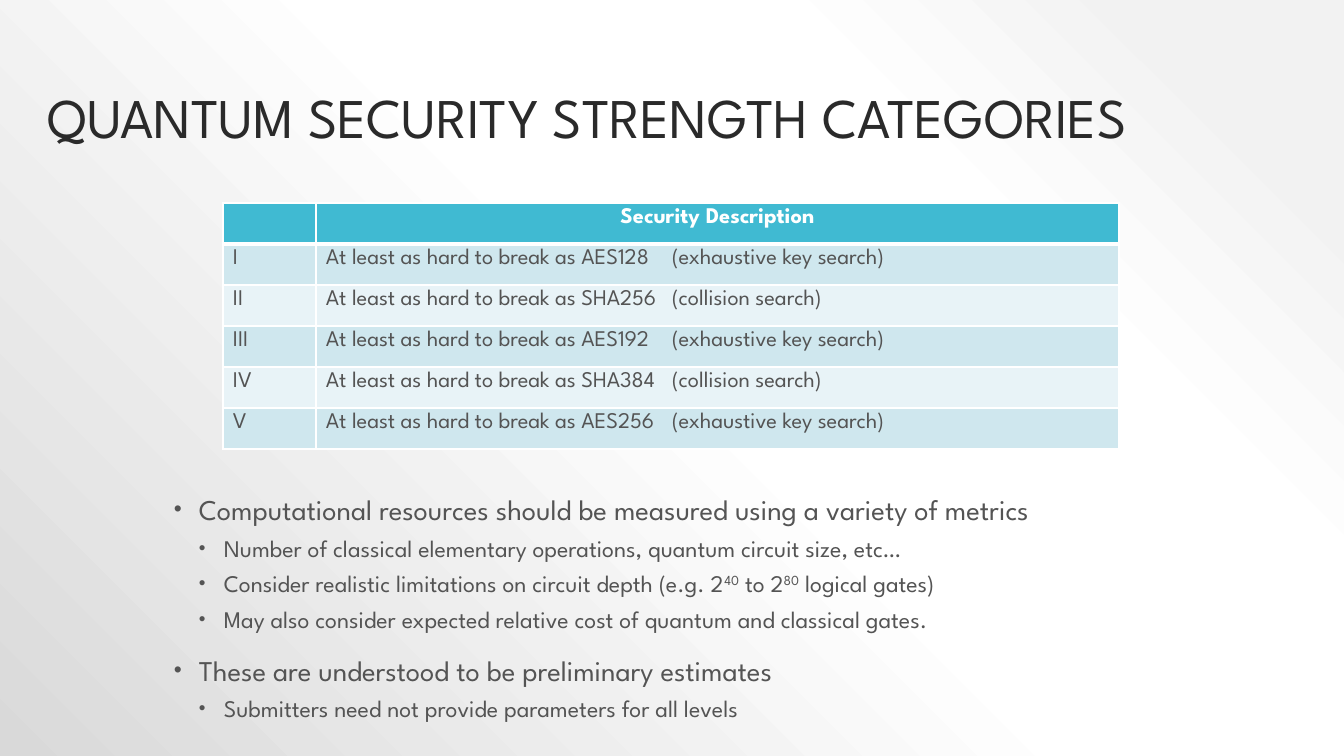
from lxml.etree import SubElement
from pptx import Presentation
from pptx.dml.color import RGBColor
from pptx.enum.text import MSO_ANCHOR, PP_ALIGN
from pptx.oxml.ns import qn
from pptx.util import Pt

PX = 914400 / 100.8
FONT = "League Spartan"
COLORS = {
    "title": "2A2A2A", "text": "545454", "white": "FFFFFF",
    "header": "40BAD2", "odd": "CFE7EE", "even": "E8F3F7",
    "corner": "F2F2F2", "far": "D9D9D9",
}


def px(length):
    return round(length * PX)


def style(para, size, color, bold=False):
    for span in para.runs:
        span.font.name = FONT
        span.font.size = Pt(size)
        span.font.bold = bold
        span.font.color.rgb = RGBColor.from_string(COLORS[color])


deck = Presentation()
deck.slide_width, deck.slide_height = px(1344), px(756)
page = deck.slides.add_slide(deck.slide_layouts[6])

# Background: radial gradient centred on the top right corner
page.background.fill.solid()
background = page.element.find(".//" + qn("p:bgPr"))
background.remove(background[0])
gradient = background.makeelement(qn("a:gradFill"), {"rotWithShape": "1"})
background.insert(0, gradient)
stops = SubElement(gradient, qn("a:gsLst"))
for percent, color in [(10, "corner"), (28, "white"), (48, "white"), (100, "far")]:
    stop = SubElement(stops, qn("a:gs"), pos=str(percent * 1000))
    SubElement(stop, qn("a:srgbClr"), val=COLORS[color])
circle = SubElement(gradient, qn("a:path"), {"path": "circle"})
SubElement(circle, qn("a:fillToRect"), l="100000", b="100000")

# Title
title = page.shapes.add_textbox(px(38), px(73), px(1243), px(83)).text_frame
title.word_wrap = True
title.vertical_anchor = MSO_ANCHOR.BOTTOM
title.text = "QUANTUM SECURITY STRENGTH CATEGORIES"
title.paragraphs[0].line_spacing = 0.9
style(title.paragraphs[0], 40, "title")

# Table of categories; a tab sets off the kind of search
HARD = "At least as hard to break as "
ROWS = [
    ("", "Security Description"),
    ("I", HARD + "AES128\t(exhaustive key search)"),
    ("II", HARD + "SHA256\t(collision search)"),
    ("III", HARD + "AES192\t(exhaustive key search)"),
    ("IV", HARD + "SHA384\t(collision search)"),
    ("V", HARD + "AES256\t(exhaustive key search)"),
]
table = page.shapes.add_table(len(ROWS), 2, px(223), px(203), px(896), px(246)).table
for column, width in zip(table.columns, (93, 803)):
    column.width = px(width)
for r, row in enumerate(ROWS):
    table.rows[r].height = px(41)
    for c, text in enumerate(row):
        cell = table.cell(r, c)
        cell.margin_left = cell.margin_right = px(10)
        cell.margin_top = cell.margin_bottom = px(5 if text else 0)
        cell.text = text
        para = cell.text_frame.paragraphs[0]
        style(para, 16, "text" if r else "white", bold=r == 0)
        if r == 0:
            para.alignment = PP_ALIGN.CENTER
        elif c == 1:
            tabs = SubElement(para._p.get_or_add_pPr(), qn("a:tabLst"))
            SubElement(tabs, qn("a:tab"), pos=str(px(346)), algn="l")
        # White borders, thick below the header
        for side in ("L", "R", "T", "B"):
            thick = (r, side) in [(0, "B"), (1, "T")]
            border = SubElement(cell._tc.get_or_add_tcPr(), qn("a:ln" + side),
                                w=str(Pt(3 if thick else 1)))
            paint = SubElement(border, qn("a:solidFill"))
            SubElement(paint, qn("a:srgbClr"), val=COLORS["white"])
        cell.fill.solid()
        shade = "header" if r == 0 else "odd" if r % 2 else "even"
        cell.fill.fore_color.rgb = RGBColor.from_string(COLORS[shade])

# Bullets: level and pieces of text, every second piece raised
BULLETS = [
    (0, ["Computational resources should be measured using a variety of metrics"]),
    (1, ["Number of classical elementary operations, quantum circuit size, etc…"]),
    (1, ["Consider realistic limitations on circuit depth (e.g. 2", "40", " to 2", "80",
         " logical gates)"]),
    (1, ["May also consider expected relative cost of quantum and classical gates."]),
    (0, ["These are understood to be preliminary estimates"]),
    (1, ["Submitters need not provide parameters for all levels"]),
]
body = page.shapes.add_textbox(px(159), px(487), px(1075), px(209)).text_frame
body.word_wrap = True
for i, (level, pieces) in enumerate(BULLETS):
    para = body.add_paragraph() if i else body.paragraphs[0]
    para.level = level
    para.line_spacing = 1.0
    para.space_before = Pt((14, 5)[level] if i else 0)
    for n, piece in enumerate(pieces):
        span = para.add_run()
        span.text = piece
        if n % 2:
            span.font._element.set("baseline", "30000")
    style(para, (20.4, 17)[level], "text")
    layout = para._p.get_or_add_pPr()
    layout.set("marL", str(px(30 + 25 * level)))
    layout.set("indent", str(px(-25)))
    tint = SubElement(layout, qn("a:buClr"))
    SubElement(tint, qn("a:srgbClr"), val=COLORS["text"])
    SubElement(layout, qn("a:buSzPct"), val="80000")
    SubElement(layout, qn("a:buFont"), typeface="Arial")
    SubElement(layout, qn("a:buChar"), char="•")

deck.save("out.pptx")
